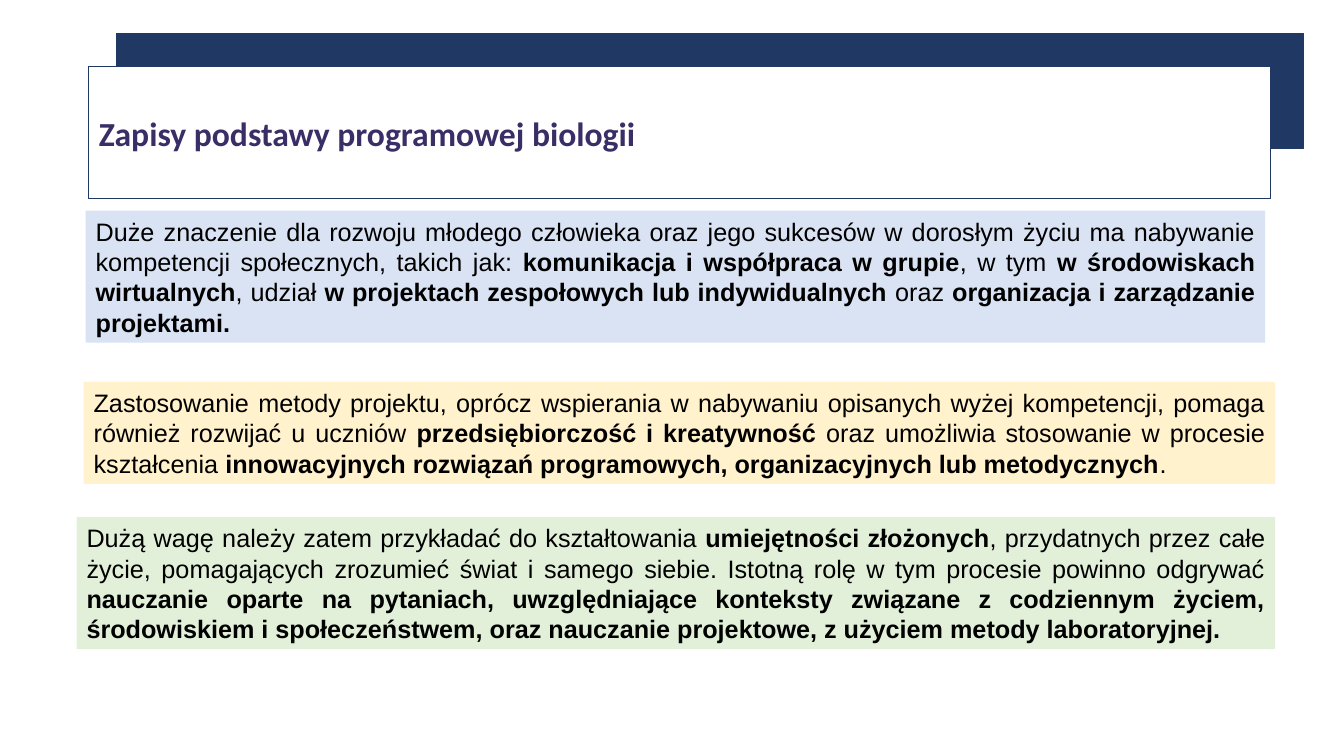
from dataclasses import dataclass

from pptx import Presentation
from pptx.dml.color import RGBColor
from pptx.enum.shapes import MSO_SHAPE
from pptx.enum.text import MSO_ANCHOR, MSO_AUTO_SIZE, PP_ALIGN
from pptx.shapes.autoshape import Shape
from pptx.slide import Slide
from pptx.util import Inches, Pt

SLIDE_WIDTH, SLIDE_HEIGHT = Inches(13.33), Inches(7.5)
BOLD_MARK = "**"


@dataclass(frozen=True)
class Theme:
    navy: RGBColor = RGBColor.from_string("203864")
    white: RGBColor = RGBColor.from_string("FFFFFF")
    heading: RGBColor = RGBColor.from_string("392E65")
    ink: RGBColor = RGBColor.from_string("000000")
    blue: RGBColor = RGBColor.from_string("DAE3F3")
    yellow: RGBColor = RGBColor.from_string("FFF2CC")
    green: RGBColor = RGBColor.from_string("E2F0D9")
    heading_font: str = "Calibri"
    body_font: str = "Arial"
    heading_size: Pt = Pt(24)
    body_size: Pt = Pt(18)
    outline: Pt = Pt(0.75)


THEME = Theme()


@dataclass(frozen=True)
class Area:
    """A rectangle in percent of the slide's width and height."""
    left: float
    top: float
    width: float
    height: float

    def lengths(self) -> tuple[int, int, int, int]:
        return (int(SLIDE_WIDTH * self.left / 100), int(SLIDE_HEIGHT * self.top / 100),
                int(SLIDE_WIDTH * self.width / 100), int(SLIDE_HEIGHT * self.height / 100))


@dataclass(frozen=True)
class Statement:
    """A curriculum passage; text between bold marks is bold."""
    area: Area
    fill: RGBColor
    text: str


BAND_AREA = Area(8.7, 4.4, 88.28, 15.2)
HEADING_AREA = Area(6.6, 8.8, 87.9, 17.47)
HEADING = "Zapisy podstawy programowej biologii"

STATEMENTS = (
    Statement(
        Area(6.38, 27.87, 87.75, 17.47), THEME.blue,
        "Duże znaczenie dla rozwoju młodego człowieka oraz jego sukcesów w dorosłym życiu "
        "ma nabywanie kompetencji społecznych, takich jak: **komunikacja i współpraca "
        "w grupie**, w tym **w środowiskach wirtualnych**, udział **w projektach "
        "zespołowych lub indywidualnych **oraz **organizacja i zarządzanie projektami."),
    Statement(
        Area(6.23, 50.53, 88.65, 13.47), THEME.yellow,
        "Zastosowanie metody projektu, oprócz wspierania w nabywaniu opisanych wyżej "
        "kompetencji, pomaga również rozwijać u uczniów **przedsiębiorczość i kreatywność "
        "**oraz umożliwia stosowanie w procesie kształcenia **innowacyjnych rozwiązań "
        "programowych, organizacyjnych lub metodycznych**."),
    Statement(
        Area(5.7, 68.4, 89.18, 17.47), THEME.green,
        "Dużą wagę należy zatem przykładać do kształtowania **umiejętności złożonych**, "
        "przydatnych przez całe życie, pomagających zrozumieć świat i samego siebie. "
        "Istotną rolę w tym procesie powinno odgrywać **nauczanie oparte na pytaniach, "
        "uwzględniające konteksty związane z codziennym życiem, środowiskiem "
        "i społeczeństwem, oraz nauczanie projektowe, z użyciem metody laboratoryjnej."),
)


def paint(shape: Shape, fill: RGBColor) -> None:
    """Fill the shape and give it the thin navy outline."""
    shape.fill.solid()
    shape.fill.fore_color.rgb = fill
    shape.line.color.rgb = THEME.navy
    shape.line.width = THEME.outline


def add_heading(slide: Slide) -> None:
    band = slide.shapes.add_shape(MSO_SHAPE.RECTANGLE, *BAND_AREA.lengths())
    band.shadow.inherit = False
    paint(band, THEME.navy)

    heading = slide.shapes.title
    heading.left, heading.top, heading.width, heading.height = HEADING_AREA.lengths()
    paint(heading, THEME.white)
    # The heading has to lie in front of the band.
    band.element.addnext(heading.element)

    frame = heading.text_frame
    frame.text = HEADING
    frame.auto_size = MSO_AUTO_SIZE.NONE
    frame.vertical_anchor = MSO_ANCHOR.MIDDLE
    paragraph = frame.paragraphs[0]
    paragraph.alignment = PP_ALIGN.LEFT
    paragraph.font.name = THEME.heading_font
    paragraph.font.size = THEME.heading_size
    paragraph.font.bold = True
    paragraph.font.color.rgb = THEME.heading


def add_statement(slide: Slide, statement: Statement) -> None:
    box = slide.shapes.add_textbox(*statement.area.lengths())
    box.fill.solid()
    box.fill.fore_color.rgb = statement.fill
    frame = box.text_frame
    frame.word_wrap = True
    frame.vertical_anchor = MSO_ANCHOR.MIDDLE
    paragraph = frame.paragraphs[0]
    paragraph.alignment = PP_ALIGN.JUSTIFY
    paragraph.font.name = THEME.body_font
    paragraph.font.size = THEME.body_size
    paragraph.font.color.rgb = THEME.ink
    for index, passage in enumerate(statement.text.split(BOLD_MARK)):
        run = paragraph.add_run()
        run.text = passage
        run.font.bold = index % 2 == 1


def main() -> None:
    presentation = Presentation()
    presentation.slide_width, presentation.slide_height = SLIDE_WIDTH, SLIDE_HEIGHT
    title_only = presentation.slide_layouts.get_by_name("Title Only")
    slide = presentation.slides.add_slide(title_only)
    add_heading(slide)
    for statement in STATEMENTS:
        add_statement(slide, statement)
    presentation.save("out.pptx")


if __name__ == "__main__":
    main()
